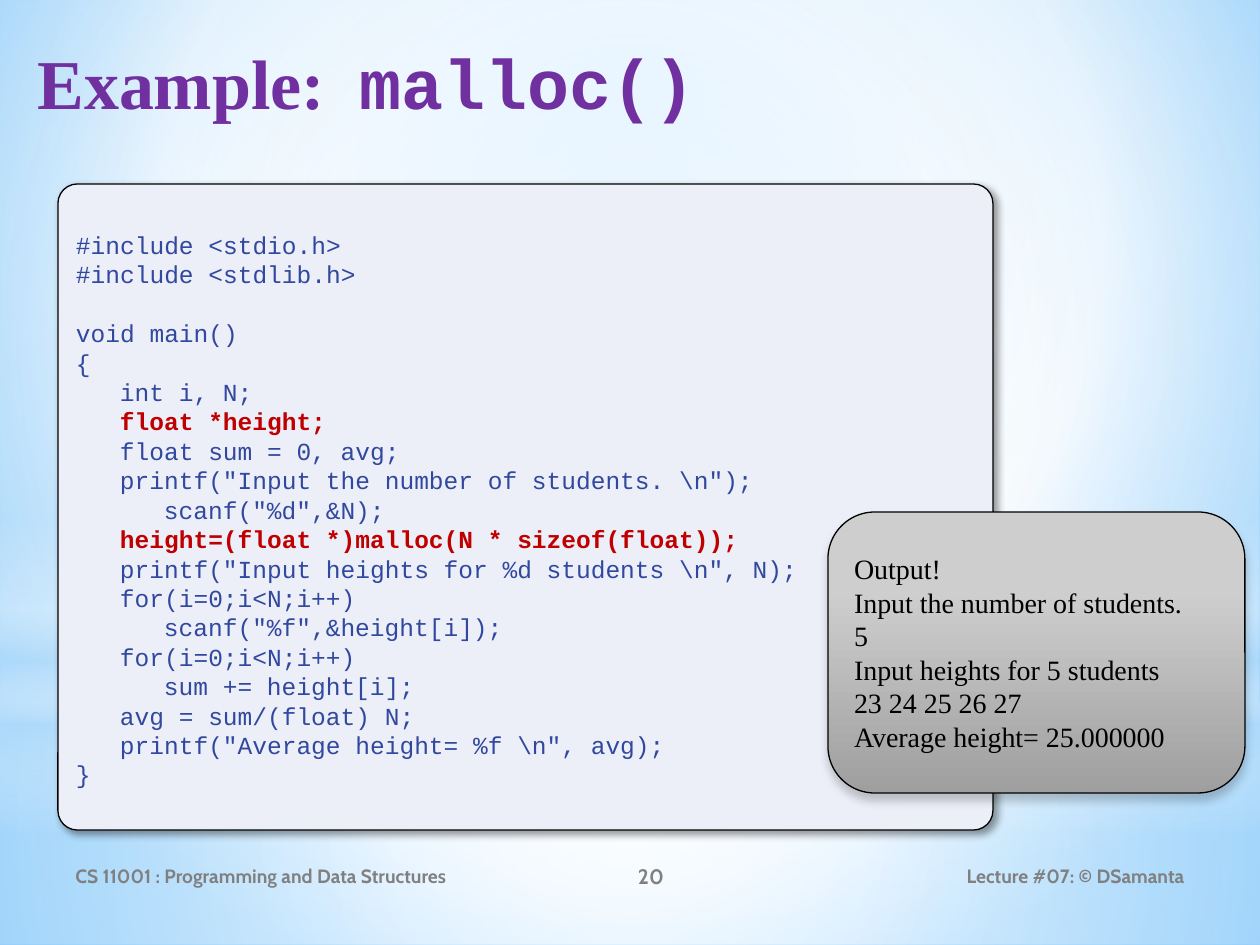
from typing import NamedTuple, Optional

from lxml import etree
from pptx import Presentation
from pptx import util as u
from pptx.dml.color import RGBColor
from pptx.enum import shapes, text
from pptx.oxml.ns import nsdecls, qn

PX = 914400 / 126  # EMU in one px

PURPLE = RGBColor(0x70, 0x30, 0xA0)
GREY = RGBColor(0x80, 0x80, 0x80)
CODE_BLUE = RGBColor(0x31, 0x48, 0x9F)
CODE_RED = RGBColor(0xC0, 0x00, 0x00)
PANEL = RGBColor(0xEC, 0xEF, 0xF8)
BLACK = RGBColor(0, 0, 0)
WHITE = RGBColor(0xFF, 0xFF, 0xFF)
SKY = RGBColor(0xB4, 0xDC, 0xFA)
CODE_INDENT = 44  # px, three characters of code


class Box(NamedTuple):
    left: int
    top: int
    width: int
    height: int


class Stop(NamedTuple):
    position: int
    color: RGBColor
    opacity: int = 100


class Gradient(NamedTuple):
    stops: list[Stop]
    angle: Optional[int] = None
    focus: tuple[int, int, int, int] = (50, 50, 50, 50)


class Glow(NamedTuple):
    box: Box
    kind: shapes.MSO_SHAPE
    gradient: Gradient


class Shadow(NamedTuple):
    opacity: int
    blur: int
    distance: int
    angle: int


class CodeLine(NamedTuple):
    text: str
    level: int = 0
    key: bool = False
    gap: bool = False


class Footer(NamedTuple):
    text: str
    box: Box
    size: int
    align: text.PP_ALIGN


def px(length: int) -> u.Emu:
    return u.Emu(round(length * PX))


def gradient_element(gradient: Gradient):
    stops = "".join(
        f'<a:gs pos="{stop.position * 1000}"><a:srgbClr val="{stop.color}">'
        f'<a:alpha val="{stop.opacity * 1000}"/></a:srgbClr></a:gs>'
        for stop in gradient.stops)
    if gradient.angle is None:
        left, top, right, bottom = (side * 1000 for side in gradient.focus)
        way = (f'<a:path path="circle"><a:fillToRect l="{left}" t="{top}" '
               f'r="{right}" b="{bottom}"/></a:path>')
    else:
        way = f'<a:lin ang="{gradient.angle * 60000}" scaled="0"/>'
    return etree.fromstring(f'<a:gradFill {nsdecls("a")} rotWithShape="1">'
                            f'<a:gsLst>{stops}</a:gsLst>{way}</a:gradFill>')


def set_background(slide, gradient: Gradient) -> None:
    background = etree.fromstring(
        f'<p:bg {nsdecls("p", "a")}><p:bgPr><a:effectLst/></p:bgPr></p:bg>')
    background[0].insert(0, gradient_element(gradient))
    slide.element.find(qn("p:cSld")).insert(0, background)


def add_shape(slide, kind, box: Box, fill, line=None, shadow: Optional[Shadow] = None):
    shape = slide.shapes.add_shape(kind, *map(px, box))
    shape.shadow.inherit = False
    if isinstance(fill, Gradient):
        shape.fill.background()
        properties = shape.element.spPr
        properties.replace(properties.find(qn("a:noFill")), gradient_element(fill))
    else:
        shape.fill.solid()
        shape.fill.fore_color.rgb = fill
    if line is None:
        shape.line.fill.background()
    else:
        shape.line.color.rgb = line
        shape.line.width = u.Pt(0.75)
    if shadow:
        shape.element.spPr.find(qn("a:effectLst")).append(etree.fromstring(
            f'<a:outerShdw {nsdecls("a")} blurRad="{shadow.blur * 12700}" '
            f'dist="{shadow.distance * 12700}" dir="{shadow.angle * 60000}" '
            f'rotWithShape="0"><a:srgbClr val="000000">'
            f'<a:alpha val="{shadow.opacity * 1000}"/></a:srgbClr></a:outerShdw>'))
    return shape


def set_frame(shape, anchor=text.MSO_ANCHOR.MIDDLE, top: int = 6):
    frame = shape.text_frame
    frame.word_wrap = True
    frame.vertical_anchor = anchor
    frame.margin_top = px(top)
    return frame


def write(frame, words: str, *, font: str, size: int, color: RGBColor, bold=False,
          align=text.PP_ALIGN.LEFT, spacing=None, before=0, indent=0, same_line=False):
    """Add words as a paragraph, or as a run of the last paragraph."""
    paragraph = frame.paragraphs[-1]
    if paragraph.runs and not same_line:
        paragraph = frame.add_paragraph()
    paragraph.alignment = align
    if spacing:
        paragraph.line_spacing = u.Pt(spacing)
    if before:
        paragraph.space_before = u.Pt(before)
    if indent:
        paragraph._p.get_or_add_pPr().set("marL", str(px(indent)))
    run = paragraph.add_run()
    run.text = words
    run.font.name, run.font.size, run.font.bold = font, u.Pt(size), bold
    run.font.color.rgb = color


BACKGROUND = Gradient([Stop(0, RGBColor(0x9E, 0xD5, 0xFF)), Stop(60, WHITE),
                       Stop(100, RGBColor(0x5B, 0xB9, 0xFF))], focus=(20, 10, 20, 60))
RECTANGLE, OVAL = shapes.MSO_SHAPE.RECTANGLE, shapes.MSO_SHAPE.OVAL
ROUNDED = shapes.MSO_SHAPE.ROUNDED_RECTANGLE
GLOWS = [
    Glow(Box(0, 703, 1260, 242), RECTANGLE,
         Gradient([Stop(0, WHITE, 91), Stop(37, WHITE, 76), Stop(100, SKY, 79)])),
    Glow(Box(0, 0, 1260, 703), RECTANGLE,
         Gradient([Stop(0, WHITE, 89), Stop(48, WHITE, 62), Stop(100, SKY, 79)])),
    Glow(Box(0, 519, 1260, 315), RECTANGLE,
         Gradient([Stop(0, WHITE, 0), Stop(29, WHITE, 30), Stop(45, SKY, 40),
                   Stop(55, WHITE, 26), Stop(65, SKY, 60), Stop(100, WHITE, 0)], 90)),
    Glow(Box(0, 220, 1260, 703), OVAL, Gradient([Stop(0, WHITE), Stop(56, WHITE, 0)])),
]
FOOTERS = [
    Footer("CS 11001 : Programming and Data Structures", Box(63, 851, 462, 50), 11,
           text.PP_ALIGN.LEFT),
    Footer("20", Box(525, 851, 252, 50), 12, text.PP_ALIGN.CENTER),
    Footer("Lecture #07: © DSamanta", Box(851, 851, 346, 50), 11, text.PP_ALIGN.RIGHT),
]
CODE = [
    CodeLine("#include <stdio.h>"),
    CodeLine("#include <stdlib.h>"),
    CodeLine("void main()", gap=True),
    CodeLine("{"),
    CodeLine("int i, N;", 1),
    CodeLine("float *height;", 1, key=True),
    CodeLine("float sum = 0, avg;", 1),
    CodeLine(r'printf("Input the number of students. \n");', 1),
    CodeLine('scanf("%d",&N);', 2),
    CodeLine("height=(float *)malloc(N * sizeof(float));", 1, key=True),
    CodeLine(r'printf("Input heights for %d students \n", N);', 1),
    CodeLine("for(i=0;i<N;i++)", 1),
    CodeLine('scanf("%f",&height[i]);', 2),
    CodeLine("for(i=0;i<N;i++)", 1),
    CodeLine("sum += height[i];", 2),
    CodeLine("avg = sum/(float) N;", 1),
    CodeLine(r'printf("Average height= %f \n", avg);', 1),
    CodeLine("}"),
]
OUTPUT = ["Output!", "Input the number of students.", "5",
          "Input heights for 5 students", "23 24 25 26 27", "Average height= 25.000000"]


def main() -> None:
    presentation = Presentation()
    presentation.slide_width, presentation.slide_height = px(1260), px(945)
    slide = presentation.slides.add_slide(presentation.slide_layouts[6])

    # Backdrop
    set_background(slide, BACKGROUND)
    for glow in GLOWS:
        add_shape(slide, glow.kind, glow.box, glow.gradient)

    # Title
    title = set_frame(slide.shapes.add_textbox(*map(px, Box(25, 26, 1201, 158))),
                      text.MSO_ANCHOR.TOP, top=14)
    write(title, "Example:  ", font="Times New Roman", size=40, color=PURPLE, bold=True)
    write(title, "malloc()", font="Courier New", size=40, color=PURPLE, bold=True,
          same_line=True)

    # Footer
    for footer in FOOTERS:
        frame = set_frame(slide.shapes.add_textbox(*map(px, footer.box)))
        write(frame, footer.text, font="Cabin", size=footer.size, color=GREY, bold=True,
              align=footer.align)

    # Code panel
    panel = add_shape(slide, ROUNDED, Box(58, 184, 935, 646), PANEL, BLACK,
                      Shadow(40, 4, 3, 45))
    panel.adjustments[0] = 0.03
    frame = set_frame(panel, top=11)
    for line in CODE:
        write(frame, line.text, font="Courier New", size=14, bold=line.key,
              color=CODE_RED if line.key else CODE_BLUE, spacing=16.8,
              before=16.8 if line.gap else 0, indent=line.level * CODE_INDENT)

    # Program output
    grey = Gradient([Stop(28, RGBColor(0xCE, 0xCE, 0xCE)),
                     Stop(100, RGBColor(0x9F, 0x9F, 0x9F))], 90)
    result = add_shape(slide, ROUNDED, Box(828, 512, 417, 281), grey, BLACK,
                       Shadow(20, 5, 4, 90))
    frame = set_frame(result)
    for line in OUTPUT:
        write(frame, line, font="Times New Roman", size=16, color=BLACK, spacing=19.2)

    presentation.save("out.pptx")


if __name__ == "__main__":
    main()
